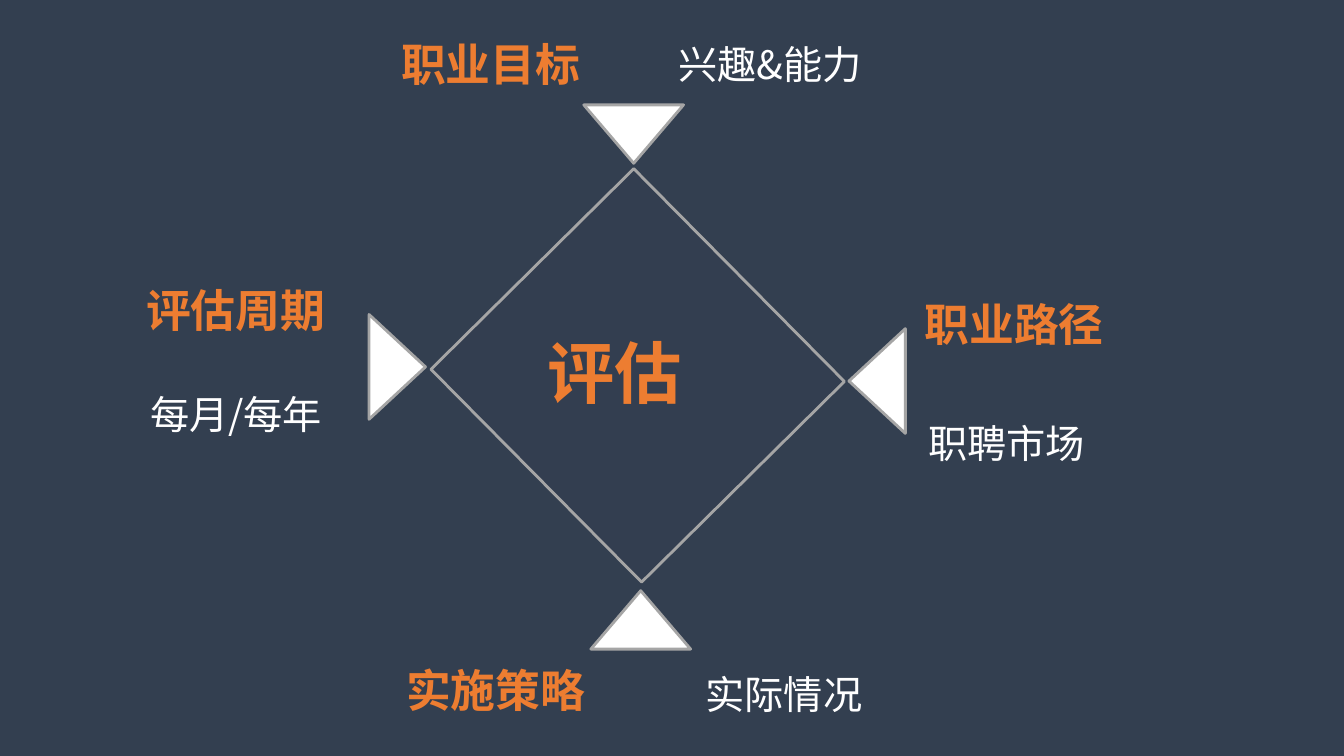
"""Build the career evaluation cycle slide."""
from lxml import etree
from pptx import Presentation
from pptx.dml.color import RGBColor
from pptx.enum import shapes, text
from pptx.oxml import ns
from pptx.util import Inches, Pt

FONT = "Noto Sans CJK SC"
NAVY, DIAMOND_FILL, GREY = "333F50", "333E50", "A5A5A5"
ORANGE, WHITE = "ED7D31", "FFFFFF"

DIAMOND = (4.84, 2.31, 2.97, 2.83)
POINTERS = [
    ((5.79, 1.04, 0.99, 0.58), 180),
    ((8.18, 3.5, 1.04, 0.56), 270),
    ((3.42, 3.36, 1.04, 0.56), 90),
    ((5.86, 5.86, 0.99, 0.58), 0),
]
CENTRE = ("评估", (5.33, 3.24, 2, 0.91))
HEADINGS = [
    ("职业目标", (3.88, 0.32, 2.17, 0.64)),
    ("职业路径", (9.07, 2.89, 3.47, 0.64)),
    ("实施策略", (3.93, 6.53, 2.82, 0.64)),
    ("评估周期", (1.35, 2.76, 2.82, 0.64)),
]
DETAILS = [
    ("兴趣&能力", (6.63, 0.35, 5.28, 0.57)),
    ("实际情况", (6.9, 6.6, 6.23, 0.57)),
    ("职聘市场", (9.11, 4.11, 4.42, 0.57)),
    ("每月/每年", (1.39, 3.82, 2.63, 0.57)),
]


def paint(color_format, color):
    color_format.rgb = RGBColor.from_string(color)


def add_outlined(group, preset, box, rotation, color):
    shape = group.shapes.add_shape(preset, *map(Inches, box))
    shape.rotation = rotation
    shape.shadow.inherit = False
    shape.fill.solid()
    paint(shape.fill.fore_color, color)
    paint(shape.line.color, GREY)
    shape.line.width = Pt(2)


def add_label(slide, wording, box, size, color, bold):
    frame = slide.shapes.add_textbox(*map(Inches, box)).text_frame
    frame.word_wrap = True
    frame.auto_size = text.MSO_AUTO_SIZE.SHAPE_TO_FIT_TEXT
    run = frame.paragraphs[0].add_run()
    run.text = wording
    run.font.size = Pt(size)
    run.font.bold = bold
    run.font.name = FONT
    paint(run.font.color, color)
    east_asian = etree.SubElement(run._r.get_or_add_rPr(), ns.qn("a:ea"))
    east_asian.set("typeface", FONT)


def main():
    deck = Presentation()
    deck.slide_width, deck.slide_height = Inches(13.33), Inches(7.5)
    slide = deck.slides.add_slide(deck.slide_layouts.get_by_name("Blank"))
    slide.background.fill.solid()
    paint(slide.background.fill.fore_color, NAVY)

    cycle = slide.shapes.add_group_shape()
    add_outlined(cycle, shapes.MSO_SHAPE.RECTANGLE, DIAMOND, 45.3, DIAMOND_FILL)
    for box, rotation in POINTERS:
        add_outlined(cycle, shapes.MSO_SHAPE.ISOSCELES_TRIANGLE, box, rotation, WHITE)

    add_label(slide, *CENTRE, 48, ORANGE, True)
    for wording, box in HEADINGS:
        add_label(slide, wording, box, 32, ORANGE, True)
    for wording, box in DETAILS:
        add_label(slide, wording, box, 28, WHITE, False)
    deck.save("out.pptx")


if __name__ == "__main__":
    main()
